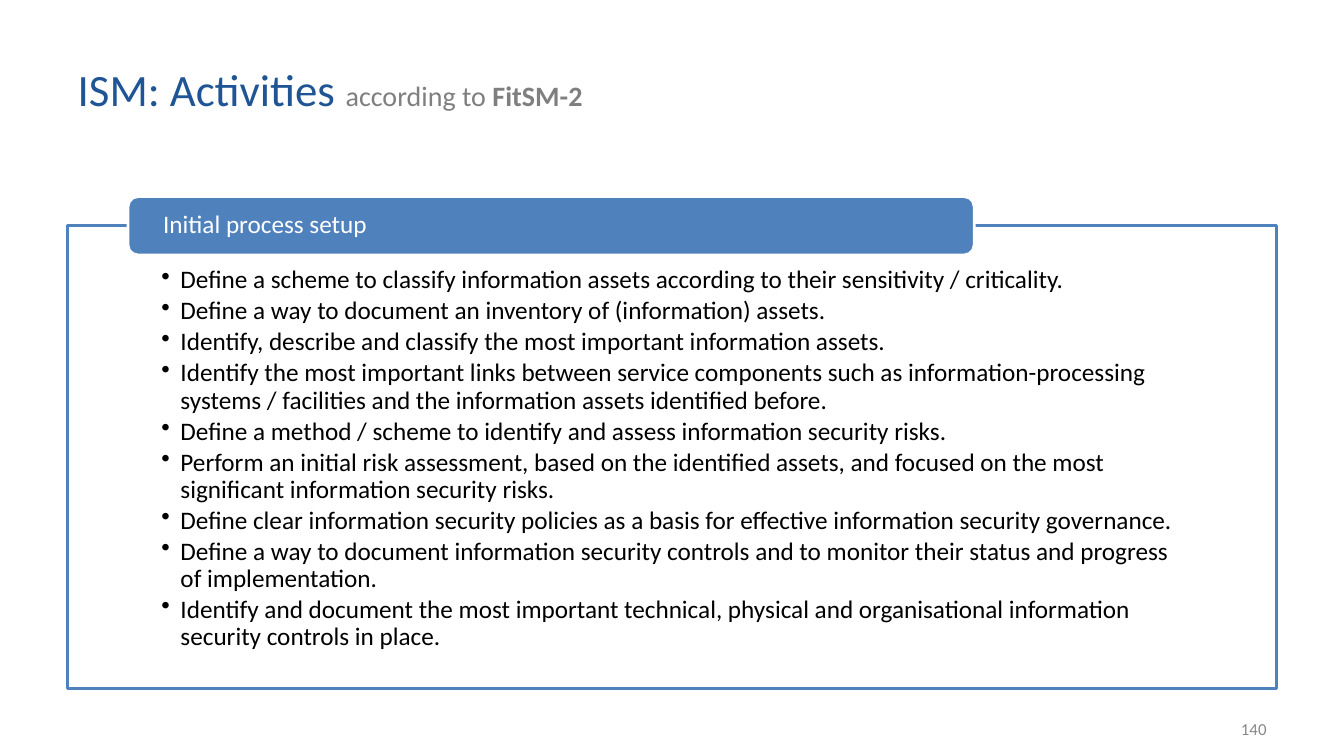
from lxml import etree
from pptx import Presentation
from pptx.dml.color import RGBColor
from pptx.enum.shapes import MSO_SHAPE
from pptx.enum.text import MSO_ANCHOR, PP_ALIGN
from pptx.oxml.ns import qn
from pptx.util import Inches, Pt

RECT, ROUNDED = MSO_SHAPE.RECTANGLE, MSO_SHAPE.ROUNDED_RECTANGLE
TOP, MIDDLE = MSO_ANCHOR.TOP, MSO_ANCHOR.MIDDLE
LEFT, RIGHT = PP_ALIGN.LEFT, PP_ALIGN.RIGHT

TITLE = [
    ("ISM: Activities ", 32, "navy", False),
    ("according to ", 20, "gray", False),
    ("FitSM-2", 20, "gray", True),
]
HEADING = "Initial process setup"
ACTIVITIES = [
    "Define a scheme to classify information assets according to their sensitivity / criticality.",
    "Define a way to document an inventory of (information) assets.",
    "Identify, describe and classify the most important information assets.",
    "Identify the most important links between service components such as "
    "information-processing systems / facilities and the information assets identified before.",
    "Define a method / scheme to identify and assess information security risks.",
    "Perform an initial risk assessment, based on the identified assets, and focused on "
    "the most significant information security risks.",
    "Define clear information security policies as a basis for effective information "
    "security governance.",
    "Define a way to document information security controls and to monitor their status "
    "and progress of implementation.",
    "Identify and document the most important technical, physical and organisational "
    "information security controls in place.",
]
PAGE = "140"
COLORS = {"navy": "205595", "gray": "7F7F7F", "blue": "4F81BD",
          "white": "FFFFFF", "black": "000000", "page": "888888"}
FONT = "Calibri"

WIDTH, HEIGHT = 13.33, 7.5
MARGIN = 0.67
PANEL_WIDTH = WIDTH - 2 * MARGIN
PANEL_TOP, PANEL_HEIGHT = 2.24, 4.59
TAB_LEFT, TAB_WIDTH, TAB_HEIGHT = MARGIN + 0.05 * PANEL_WIDTH, 0.7 * PANEL_WIDTH, 0.58
PAGE_WIDTH = 3.11
INDENT = 0.19


def color(name):
    return RGBColor.from_string(COLORS[name])


def style(font, size, tone, bold=False):
    font.name, font.size, font.bold = FONT, Pt(size), bold
    font.color.rgb = color(tone)


def set_frame(frame, anchor, insets):
    frame.word_wrap = True
    frame.vertical_anchor = anchor
    (frame.margin_left, frame.margin_top,
     frame.margin_right, frame.margin_bottom) = map(Inches, insets)


def add_block(kind, left, top, width, height, fill, line):
    block = slide.shapes.add_shape(kind, *map(Inches, (left, top, width, height)))
    block.shadow.inherit = False
    block.fill.solid()
    block.fill.fore_color.rgb = color(fill)
    block.line.color.rgb = color(line)
    block.line.width = Pt(2)
    return block


def add_bullet(paragraph):
    properties = paragraph._p.get_or_add_pPr()
    properties.set("marL", str(Inches(INDENT)))
    properties.set("indent", str(-Inches(INDENT)))
    tone = etree.SubElement(properties, qn("a:buClr"))
    etree.SubElement(tone, qn("a:srgbClr"), val=COLORS["black"])
    etree.SubElement(properties, qn("a:buChar"), char="•")


deck = Presentation()
deck.slide_width, deck.slide_height = Inches(WIDTH), Inches(HEIGHT)
slide = deck.slides.add_slide(deck.slide_layouts[5])

title = slide.shapes.title
title.left, title.top, title.width, title.height = map(Inches, (MARGIN, 0.3, 9.91, 1.15))
set_frame(title.text_frame, MIDDLE, (0.1, 0.05, 0.1, 0.05))
title_line = title.text_frame.paragraphs[0]
title_line.alignment = LEFT
for words, size, tone, bold in TITLE:
    part = title_line.add_run()
    part.text = words
    style(part.font, size, tone, bold)

panel = add_block(RECT, MARGIN, PANEL_TOP, PANEL_WIDTH, PANEL_HEIGHT, "white", "blue")
panel_tone = panel.fill._xPr.find(qn("a:solidFill")).find(qn("a:srgbClr"))
etree.SubElement(panel_tone, qn("a:alpha"), val="90000")
set_frame(panel.text_frame, TOP, (0.93, 0.41, 0.93, 0.14))
panel.text_frame.text = "\n".join(ACTIVITIES)
for index, activity in enumerate(panel.text_frame.paragraphs):
    add_bullet(activity)
    activity.level = 1
    activity.alignment = LEFT
    activity.line_spacing = 0.9
    activity.space_before = Pt(2.7 if index else 0)
    style(activity.runs[0].font, 18, "black")

tab = add_block(ROUNDED, TAB_LEFT, PANEL_TOP - TAB_HEIGHT / 2, TAB_WIDTH, TAB_HEIGHT,
                "blue", "white")
tab.adjustments[0] = 0.17
set_frame(tab.text_frame, MIDDLE, (0.32, 0, 0.32, 0))
tab.text_frame.text = HEADING
heading = tab.text_frame.paragraphs[0]
heading.alignment = LEFT
heading.line_spacing = 0.9
style(heading.runs[0].font, 18, "white")

page = slide.shapes.add_textbox(*map(Inches, (WIDTH - MARGIN - PAGE_WIDTH, 7.03, PAGE_WIDTH, 0.4)))
set_frame(page.text_frame, MIDDLE, (0.1, 0.05, 0.1, 0.05))
page.text_frame.text = PAGE
number = page.text_frame.paragraphs[0]
number.alignment = RIGHT
style(number.runs[0].font, 12, "page")

deck.save("out.pptx")
